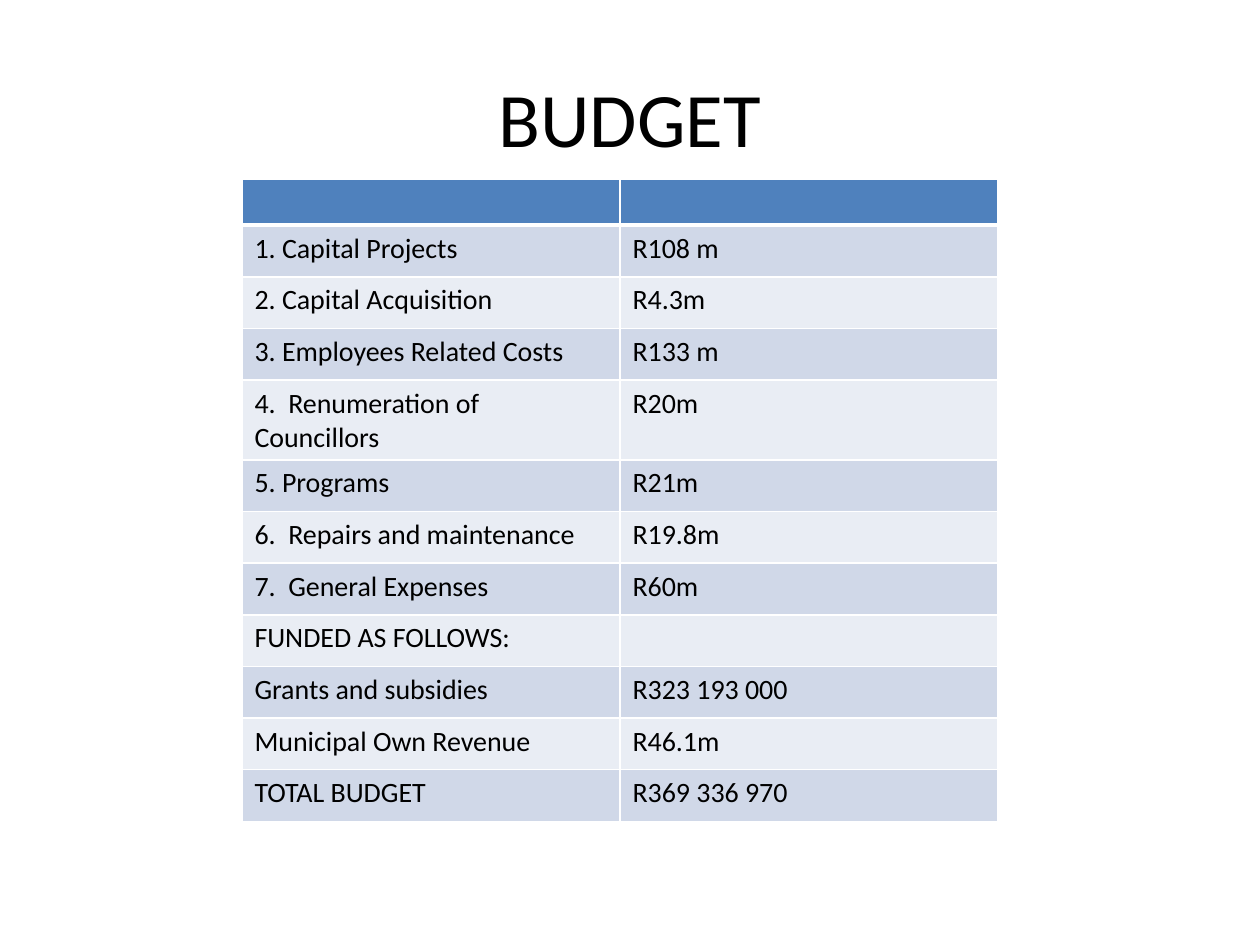
from typing import NamedTuple

from lxml.etree import SubElement
from pptx import Presentation
from pptx.dml.color import RGBColor
from pptx.enum.text import MSO_ANCHOR as Anchor, PP_ALIGN as Align
from pptx.oxml.ns import qn
from pptx.util import Emu, Pt

EMU_PER_PX = 9144
FONT = "Calibri"
TITLE_SIZE = 44
BODY_SIZE = 16
BLACK = RGBColor(0x00, 0x00, 0x00)
WHITE = RGBColor(0xFF, 0xFF, 0xFF)
HEADER_BLUE = RGBColor(0x4F, 0x81, 0xBD)
BANDS = (RGBColor(0xD0, 0xD8, 0xE8), RGBColor(0xE9, 0xED, 0xF4))
HEADER_HEIGHT = 33
ROW_HEIGHT = 41
COLUMN_WIDTH = 300
THIN, THICK = 1, 3


class BudgetLine(NamedTuple):
    label: str
    amount: str


BUDGET = [
    BudgetLine("1. Capital Projects", "R108 m"),
    BudgetLine("2. Capital Acquisition", "R4.3m"),
    BudgetLine("3. Employees Related Costs", "R133 m"),
    BudgetLine("4.  Renumeration of Councillors", "R20m"),
    BudgetLine("5. Programs", "R21m"),
    BudgetLine("6.  Repairs and maintenance", "R19.8m"),
    BudgetLine("7.  General Expenses", "R60m"),
    BudgetLine("FUNDED AS FOLLOWS:", ""),
    BudgetLine("Grants and subsidies", "R323 193 000"),
    BudgetLine("Municipal Own Revenue", "R46.1m"),
    BudgetLine("TOTAL BUDGET", "R369 336 970"),
]


def px(length: int) -> Emu:
    return Emu(length * EMU_PER_PX)


def add_span(para, text: str, size: int) -> None:
    span = para.add_run()
    span.text = text
    span.font.name = FONT
    span.font.size = Pt(size)
    span.font.color.rgb = BLACK


def add_title(slide, text: str) -> None:
    box = slide.shapes.add_textbox(px(50), px(30), px(900), px(125))
    frame = box.text_frame
    frame.word_wrap = True
    frame.vertical_anchor = Anchor.MIDDLE
    para = frame.paragraphs[0]
    para.alignment = Align.CENTER
    add_span(para, text, TITLE_SIZE)


def set_borders(cell, top: int, bottom: int) -> None:
    properties = cell._tc.get_or_add_tcPr()
    widths = {"a:lnL": THIN, "a:lnR": THIN, "a:lnT": top, "a:lnB": bottom}
    for tag, width in widths.items():
        line = SubElement(properties, qn(tag), w=str(Pt(width)))
        fill = SubElement(line, qn("a:solidFill"))
        SubElement(fill, qn("a:srgbClr"), val=str(WHITE))


def fill_cell(cell, text: str, row: int) -> None:
    set_borders(cell, THICK if row == 1 else THIN, THICK if row == 0 else THIN)
    cell.fill.solid()
    cell.fill.fore_color.rgb = BANDS[(row - 1) % 2] if row else HEADER_BLUE
    para = cell.text_frame.paragraphs[0]
    if text:
        add_span(para, text, BODY_SIZE)
    else:
        SubElement(para._p, qn("a:endParaRPr"), sz=str(BODY_SIZE * 100))


def add_budget_table(slide, lines: list[BudgetLine]) -> None:
    rows = [BudgetLine("", ""), *lines]
    columns = len(BudgetLine._fields)
    height = HEADER_HEIGHT + ROW_HEIGHT * len(lines)
    frame = slide.shapes.add_table(
        len(rows), columns, px(192), px(142), px(COLUMN_WIDTH * columns), px(height)
    )
    table = frame.table
    for column in table.columns:
        column.width = px(COLUMN_WIDTH)
    for index, line in enumerate(rows):
        table.rows[index].height = px(ROW_HEIGHT if index else HEADER_HEIGHT)
        for column_index, text in enumerate(line):
            fill_cell(table.cell(index, column_index), text, index)


def main() -> None:
    deck = Presentation()
    deck.slide_width, deck.slide_height = px(1000), px(750)
    page = deck.slides.add_slide(deck.slide_layouts[6])
    add_title(page, "BUDGET")
    add_budget_table(page, BUDGET)
    deck.save("out.pptx")


if __name__ == "__main__":
    main()
